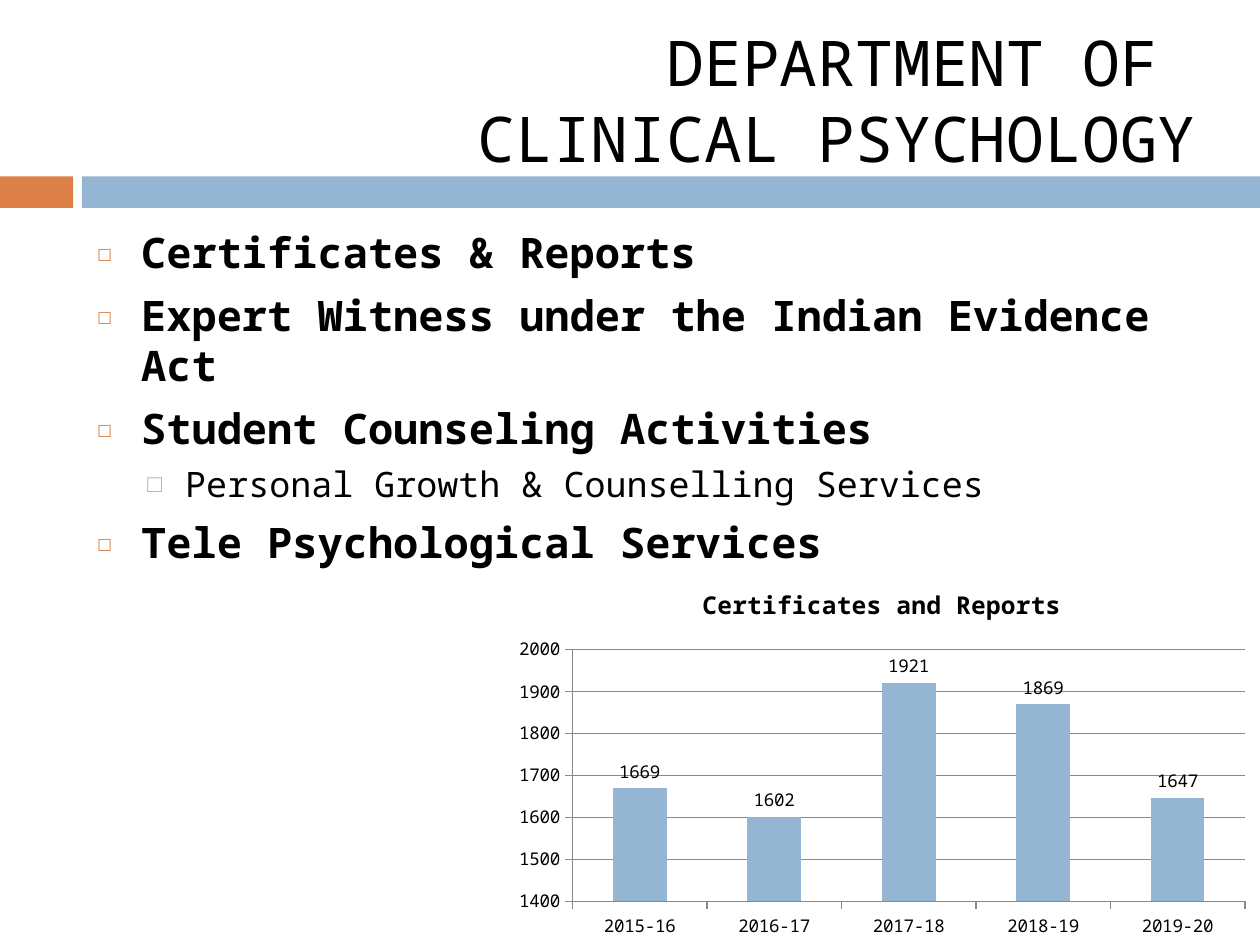
"""Build the clinical psychology department slide with its services and chart."""
from lxml import etree
from pptx import Presentation
from pptx.chart import data
from pptx.dml.color import RGBColor
from pptx.enum import chart as kinds, shapes, text
from pptx.oxml import ns
from pptx.util import Inches, Pt

FONT = "Noto Sans Mono"
COLORS = {"orange": "DD8047", "blue": "94B6D2", "text": "000000", "grid": "888888"}
TITLE = ["DEPARTMENT OF ", "CLINICAL PSYCHOLOGY"]
BANDS = [(0, 0.58, "orange"), (0.65, 9.35, "blue")]
SERVICES = [
    ("Certificates & Reports", 0),
    ("Expert Witness under the Indian Evidence Act", 0),
    ("Student Counseling Activities", 0),
    ("Personal Growth & Counselling Services", 1),
    ("Tele Psychological Services", 0),
]
LEVELS = [
    dict(size=24, bold=True, before=7, left=0.35, hang=0.35,
         bullet="◻", color="orange", percent=60),
    dict(size=20, bold=False, before=5.5, left=0.7, hang=0.3,
         bullet="□", color="blue", percent=70),
]
CHART_TITLE = "Certificates and Reports"
REPORTS = {"2015-16": 1669, "2016-17": 1602, "2017-18": 1921,
           "2018-19": 1869, "2019-20": 1647}


def rgb(name):
    return RGBColor.from_string(COLORS[name])


def style(font, size, bold=False):
    font.name, font.size, font.bold = FONT, Pt(size), bold
    font.color.rgb = rgb("text")


def place(shape, left, top, width, height):
    shape.left, shape.top = Inches(left), Inches(top)
    shape.width, shape.height = Inches(width), Inches(height)


def add_bullet(para, level):
    props = para._p.get_or_add_pPr()
    props.set("marL", str(Inches(level["left"])))
    props.set("indent", str(-Inches(level["hang"])))
    color = etree.SubElement(props, ns.qn("a:buClr"))
    etree.SubElement(color, ns.qn("a:srgbClr"), val=COLORS[level["color"]])
    etree.SubElement(props, ns.qn("a:buSzPct"), val=str(level["percent"] * 1000))
    etree.SubElement(props, ns.qn("a:buFont"), typeface=FONT)
    etree.SubElement(props, ns.qn("a:buChar"), char=level["bullet"])


def add_bands(page):
    for left, width, color in BANDS:
        band = page.shapes.add_shape(shapes.MSO_SHAPE.RECTANGLE, Inches(left),
                                     Inches(1.4), Inches(width), Inches(0.25))
        band.shadow.inherit = False
        band.fill.solid()
        band.fill.fore_color.rgb = rgb(color)
        band.line.fill.background()


def fill_title(box):
    place(box, 0.67, 0.25, 8.92, 1.08)
    frame = box.text_frame
    frame.auto_size = text.MSO_AUTO_SIZE.NONE
    frame.vertical_anchor = text.MSO_ANCHOR.MIDDLE
    para = frame.paragraphs[0]
    para.alignment = text.PP_ALIGN.RIGHT
    for index, line in enumerate(TITLE):
        if index:
            para.add_line_break()
        span = para.add_run()
        span.text = line
        style(span.font, 36)


def fill_services(box):
    place(box, 0.67, 1.75, 8.92, 4.92)
    frame = box.text_frame
    frame.auto_size = text.MSO_AUTO_SIZE.NONE
    for index, (service, depth) in enumerate(SERVICES):
        level = LEVELS[depth]
        para = frame.add_paragraph() if index else frame.paragraphs[0]
        para.level = depth
        para.space_before = Pt(level["before"])
        add_bullet(para, level)
        span = para.add_run()
        span.text = service
        style(span.font, level["size"], level["bold"])


def add_reports_chart(page):
    table = data.CategoryChartData()
    table.categories = list(REPORTS)
    table.add_series(CHART_TITLE, list(REPORTS.values()))
    chart = page.shapes.add_chart(
        kinds.XL_CHART_TYPE.COLUMN_CLUSTERED,
        Inches(4), Inches(4.5), Inches(6), Inches(3), table).chart
    style(chart.font, 10)
    chart.has_legend = False
    chart.has_title = True
    span = chart.chart_title.text_frame.paragraphs[0].add_run()
    span.text = CHART_TITLE
    style(span.font, 14, True)
    chart.chart_title.include_in_layout = False

    scale = chart.value_axis
    scale.minimum_scale, scale.maximum_scale, scale.major_unit = 1400, 2000, 100
    scale.has_major_gridlines = True
    for axis in (scale, chart.category_axis):
        style(axis.tick_labels.font, 10)
        axis.major_tick_mark = kinds.XL_TICK_MARK.OUTSIDE
        axis.format.line.color.rgb = rgb("grid")
    scale.major_gridlines.format.line.color.rgb = rgb("grid")

    plot = chart.plots[0]
    plot.gap_width = 150
    plot.vary_by_categories = False
    bars = plot.series[0]
    bars.format.fill.solid()
    bars.format.fill.fore_color.rgb = rgb("blue")
    labels = bars.data_labels
    labels.show_value = True
    labels.position = kinds.XL_LABEL_POSITION.OUTSIDE_END
    style(labels.font, 10)


def main():
    deck = Presentation()
    deck.slide_width, deck.slide_height = Inches(10), Inches(7.5)
    page = deck.slides.add_slide(deck.slide_layouts[1])
    add_bands(page)
    fill_title(page.shapes.title)
    fill_services(page.placeholders[1])
    add_reports_chart(page)
    deck.save("out.pptx")


if __name__ == "__main__":
    main()
